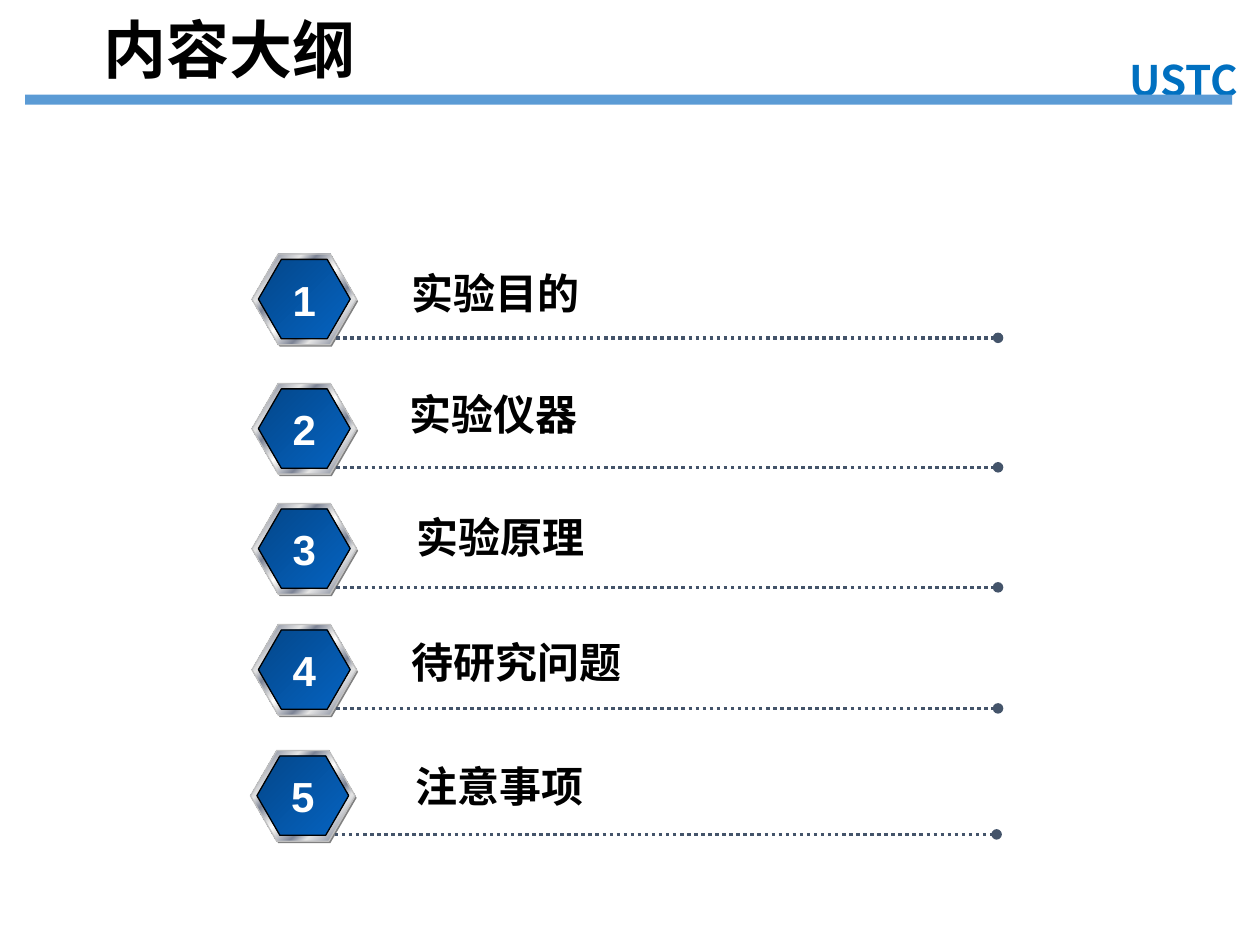
from dataclasses import dataclass

from lxml import etree
from pptx import Presentation
from pptx.dml.color import RGBColor
from pptx.enum.dml import MSO_LINE
from pptx.enum.shapes import MSO_CONNECTOR, MSO_SHAPE
from pptx.enum.text import MSO_ANCHOR, MSO_AUTO_SIZE, PP_ALIGN
from pptx.oxml.ns import qn
from pptx.util import Cm, Pt

HEXAGON = MSO_SHAPE.HEXAGON
RECTANGLE = MSO_SHAPE.RECTANGLE
STRAIGHT = MSO_CONNECTOR.STRAIGHT
DOTTED = MSO_LINE.ROUND_DOT
TOP = MSO_ANCHOR.TOP
NO_FIT = MSO_AUTO_SIZE.NONE
LEFT = PP_ALIGN.LEFT
CENTER = PP_ALIGN.CENTER


@dataclass(frozen=True)
class Theme:
    text: str = "000000"
    number: str = "FFFFFF"
    school: str = "0070C0"
    school_outline: str = "FFFFFF"
    bar: str = "5B9BD5"
    leader: str = "44546A"
    badge_shadow: str = "808080"
    rim_line: str = "C0C0C0"
    core_line: str = "000000"
    rim: tuple = (
        (0, "E6E6E6"), (8, "7D8496"), (26, "E6E6E6"), (34, "7D8496"),
        (46, "E6E6E6"), (50, "FFFFFF"), (54, "E6E6E6"), (66, "7D8496"),
        (74, "E6E6E6"), (92, "7D8496"), (100, "E6E6E6"),
    )
    core: tuple = ((0, "04478A"), (100, "0563C1"))
    title_size: int = 36
    text_size: int = 24
    latin_font: str = "Arial"
    chinese_font: str = "Noto Sans CJK SC"


theme = Theme()


def write_text(shape, text, size, colour, font, alignment=LEFT, wrap=False):
    frame = shape.text_frame
    frame.word_wrap = wrap
    frame.auto_size = NO_FIT
    frame.vertical_anchor = TOP
    paragraph = frame.paragraphs[0]
    paragraph.alignment = alignment
    run = paragraph.add_run()
    run.text = text
    run.font.size = Pt(size)
    run.font.bold = True
    run.font.name = font
    run.font.color.rgb = RGBColor.from_string(colour)
    properties = run.font._element
    etree.SubElement(properties, qn("a:ea"), typeface=theme.chinese_font)
    return properties


def add_hexagon(group, left, top, width, height, stops, line_colour=None):
    hexagon = group.shapes.add_shape(HEXAGON, Cm(left), Cm(top), Cm(width), Cm(height))
    hexagon.adjustments[0] = 0.29
    hexagon.shadow.inherit = False
    if line_colour:
        hexagon.line.color.rgb = RGBColor.from_string(line_colour)
        hexagon.line.width = Pt(0.75)
    else:
        hexagon.line.fill.background()
    if len(stops) == 1:
        hexagon.fill.solid()
        hexagon.fill.fore_color.rgb = RGBColor.from_string(stops[0][1])
        return
    hexagon.fill.gradient()
    hexagon.fill.gradient_angle = 315
    stop_list = hexagon.element.spPr.find(".//" + qn("a:gsLst"))
    for stop in list(stop_list):
        stop_list.remove(stop)
    for percent, colour in stops:
        stop = etree.SubElement(stop_list, qn("a:gs"), pos=str(percent * 1000))
        etree.SubElement(stop, qn("a:srgbClr"), val=colour)


presentation = Presentation()
presentation.slide_width = Cm(25.4)
presentation.slide_height = Cm(19.05)
slide = presentation.slides.add_slide(presentation.slide_layouts[5])

title = slide.shapes.title
title.left, title.top, title.width, title.height = Cm(1.83), Cm(0.08), Cm(6.6), Cm(1.8)
write_text(title, "内容大纲", theme.title_size, theme.text, theme.chinese_font, wrap=True)

school = slide.shapes.add_textbox(Cm(21.84), Cm(0.97), Cm(4.06), Cm(1.27))
properties = write_text(school, "USTC", theme.text_size, theme.school,
                        theme.chinese_font, CENTER, True)
outline = etree.Element(qn("a:ln"), w=str(Pt(0.75)))
outline_fill = etree.SubElement(outline, qn("a:solidFill"))
etree.SubElement(outline_fill, qn("a:srgbClr"), val=theme.school_outline)
properties.insert(0, outline)

bar = slide.shapes.add_shape(RECTANGLE, Cm(0.51), Cm(1.91), Cm(24.33), Cm(0.2))
bar.shadow.inherit = False
bar.fill.solid()
bar.fill.fore_color.rgb = RGBColor.from_string(theme.bar)
bar.line.fill.background()

agenda = [
    ("实验目的", 5.08, 5.12, 8.05, 5.26),
    ("实验仪器", 5.08, 7.73, 8.0, 7.7),
    ("实验原理", 5.08, 10.15, 8.15, 10.19),
    ("待研究问题", 5.08, 12.59, 8.05, 12.7),
    ("注意事项", 5.05, 15.13, 8.13, 15.21),
]

for number, (topic, left, top, topic_left, topic_top) in enumerate(agenda, 1):
    group = slide.shapes.add_group_shape()
    add_hexagon(group, left + 0.03, top + 0.04, 2.11, 1.83, ((0, theme.badge_shadow),))
    add_hexagon(group, left, top, 2.11, 1.83, theme.rim, theme.rim_line)
    add_hexagon(group, left + 0.13, top + 0.11, 1.85, 1.6, theme.core, theme.core_line)

    leader_top = Cm(top + 1.69)
    leader = group.shapes.add_connector(
        STRAIGHT, Cm(left + 1.7), leader_top, Cm(left + 15.04), leader_top)
    leader.line.color.rgb = RGBColor.from_string(theme.leader)
    leader.line.width = Pt(2)
    leader.line.dash_style = DOTTED
    leader_properties = leader._element.spPr
    etree.SubElement(leader_properties.find(qn("a:ln")), qn("a:tailEnd"), type="oval")
    etree.SubElement(leader_properties, qn("a:effectLst"))

    topic_width = 0.85 * len(topic) + 0.56
    topic_box = group.shapes.add_textbox(
        Cm(topic_left), Cm(topic_top), Cm(topic_width), Cm(1.3))
    write_text(topic_box, topic, theme.text_size, theme.text, theme.chinese_font)

    number_box = group.shapes.add_textbox(
        Cm(left + 0.56), Cm(top + 0.28), Cm(0.99), Cm(1.27))
    write_text(number_box, str(number), theme.text_size, theme.number,
               theme.latin_font, CENTER)

presentation.save("out.pptx")
